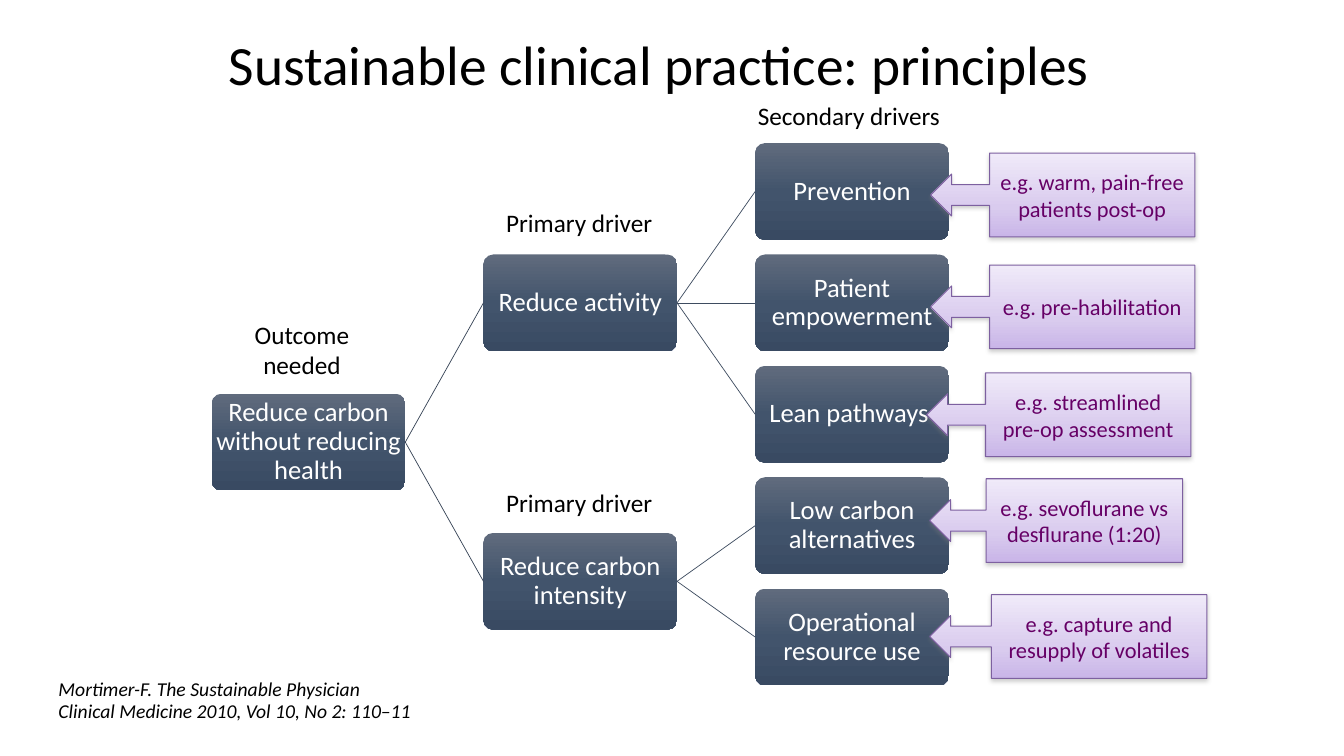
from copy import deepcopy

from pptx import Presentation
from pptx.dml.color import RGBColor
from pptx.enum.shapes import MSO_CONNECTOR, MSO_SHAPE as Shape
from pptx.enum.text import MSO_ANCHOR as Anchor, MSO_AUTO_SIZE as AutoSize, PP_ALIGN as Align
from pptx.oxml import parse_xml
from pptx.oxml.ns import nsdecls, qn
from pptx.util import Inches, Pt

colour = RGBColor.from_string
NAVY = [(0, "606B7D"), (0.5, "42546C"), (1, "394A62")]
LILAC = [(0, "F0EAF9"), (0.65, "D9CBEE"), (1, "C9B5E8")]


def shade(shape, stops):
    """Fill a shape with a three-stop gradient running from top to bottom."""
    shape.shadow.inherit = False
    shape.fill.gradient()
    shape.fill.gradient_angle = 270
    stop_list = shape._element.spPr.find(qn("a:gradFill")).find(qn("a:gsLst"))
    stop_list.append(deepcopy(stop_list[0]))
    for stop, (position, tint) in zip(shape.fill.gradient_stops, stops):
        stop.position = position
        stop.color.rgb = colour(tint)


def write(shape, lines, size, tint="000000", align=Align.CENTER, anchor=Anchor.MIDDLE,
          spacing=1.0, inset=None, italic=False):
    frame = shape.text_frame
    frame.word_wrap = True
    frame.auto_size = AutoSize.NONE
    frame.vertical_anchor = anchor
    if inset is not None:
        frame.margin_left = frame.margin_right = Inches(inset)
        frame.margin_top = frame.margin_bottom = Inches(inset)
    for i, line in enumerate(lines):
        paragraph = frame.add_paragraph() if i else frame.paragraphs[0]
        paragraph.alignment = align
        paragraph.line_spacing = spacing
        run = paragraph.add_run()
        run.text = line
        run.font.name = "Calibri"
        run.font.size = Pt(size)
        run.font.italic = italic
        run.font.color.rgb = colour(tint)


prs = Presentation()
prs.slide_width, prs.slide_height = Inches(13.33), Inches(7.5)
slide = prs.slides.add_slide(prs.slide_layouts[5])
shapes = slide.shapes

# Title
title = shapes.title
title.left, title.top, title.width, title.height = map(Inches, (2.17, 0.05, 9, 1.25))
write(title, ["Sustainable clinical practice: principles"], 39.6, align=Align.LEFT, spacing=0.9)

# Driver boxes: name, column, row; a parent sits at the mean row of its children
drivers = [
    ("Reduce carbon without reducing health", 0, 2.25),
    ("Reduce activity", 1, 1),
    ("Reduce carbon intensity", 1, 3.5),
    ("Prevention", 2, 0),
    ("Patient empowerment", 2, 1),
    ("Lean pathways ", 2, 2),
    ("Low carbon alternatives", 2, 3),
    ("Operational resource use", 2, 4),
]
boxes = []
for name, column, row in drivers:
    box = shapes.add_shape(Shape.ROUNDED_RECTANGLE, Inches(2.1 + 2.695 * column),
                           Inches(1.42 + 1.105 * row), Inches(1.92), Inches(0.96))
    box.adjustments[0] = 0.1
    shade(box, NAVY)
    box.line.fill.background()
    write(box, [name], 19, "FFFFFF", spacing=0.9, inset=0.01)
    boxes.append(box)

# Branches from each driver to the next level
branches = {0: [1, 2], 1: [3, 4, 5], 2: [6, 7]}
for parent, children in branches.items():
    for child in children:
        branch = shapes.add_connector(MSO_CONNECTOR.STRAIGHT, 0, 0, 0, 0)
        branch.begin_connect(boxes[parent], 3)
        branch.end_connect(boxes[child], 1)
        branch.line.width = Pt(0.5)
        branch.line.color.rgb = colour("3E4C60" if parent else "364355")
        branch._element.spPr.append(parse_xml(f"<a:effectLst {nsdecls('a')}/>"))

# Source reference
reference = shapes.add_textbox(*map(Inches, (0.58, 6.73, 4.05, 0.45)))
write(reference, ["Mortimer-F. The Sustainable Physician",
                  "Clinical Medicine 2010, Vol 10, No 2: 110–11"],
      14, align=Align.LEFT, anchor=Anchor.TOP, spacing=0.95, inset=0, italic=True)

# Level headings
headings = [
    ("Outcome needed", 2.08, 3.12, 1.83, 0.71),
    ("Secondary drivers", 7.25, 0.95, 2.34, 0.4),
    ("Primary driver", 4.83, 2.01, 1.83, 0.4),
    ("Primary driver", 4.83, 4.79, 1.83, 0.4),
]
for name, *area in headings:
    heading = shapes.add_textbox(*map(Inches, area))
    write(heading, [name], 18, anchor=Anchor.TOP)

# Example callouts pointing at the secondary drivers
examples = [
    ("e.g. sevoflurane vs desflurane (1:20)", 9.22, 4.75, 2.51),
    ("e.g. capture and resupply of volatiles", 9.22, 5.9, 2.75),
    ("e.g. streamlined pre-op assessment", 9.19, 3.7, 2.62),
    ("e.g. pre-habilitation", 9.23, 2.63, 2.62),
    ("e.g. warm, pain-free patients post-op", 9.23, 1.52, 2.62),
]
for text, left, top, width in examples:
    example = shapes.add_shape(Shape.LEFT_ARROW_CALLOUT, Inches(left), Inches(top),
                               Inches(width), Inches(0.83))
    for i, ratio in enumerate((0.25, 0.25, 0.25, 0.777)):
        example.adjustments[i] = ratio
    shade(example, LILAC)
    example.line.color.rgb = colour("7D60A0")
    example.line.width = Pt(0.75)
    example._element.spPr.find(qn("a:effectLst")).append(parse_xml(
        f'<a:outerShdw {nsdecls("a")} blurRad="40000" dist="20000" dir="5400000" rotWithShape="0">'
        '<a:srgbClr val="808080"><a:alpha val="38000"/></a:srgbClr></a:outerShdw>'))
    write(example, [text], 16, "660066")

prs.save("out.pptx")
